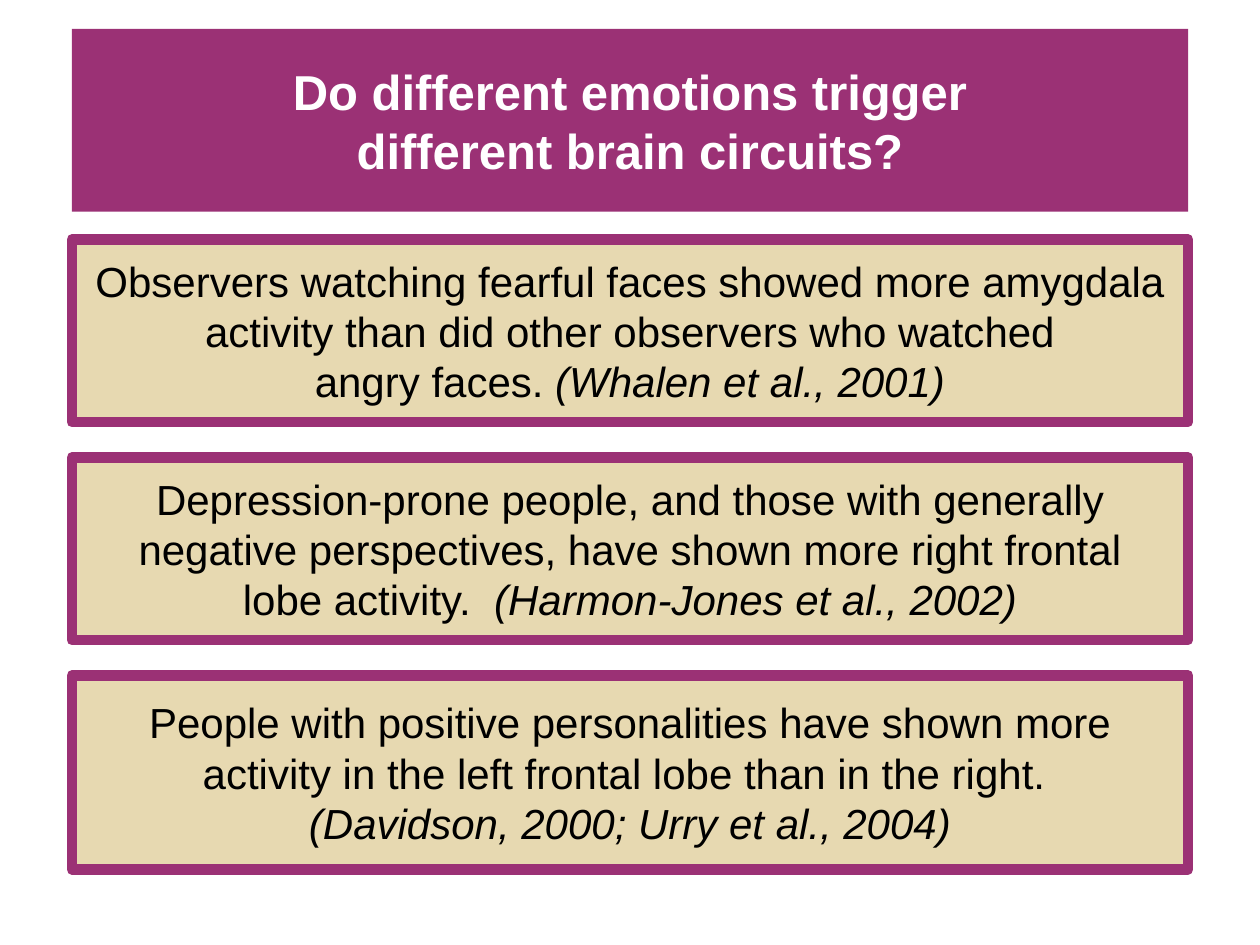
import pptx
import pptx.dml.color
import pptx.enum.shapes
import pptx.enum.text
import pptx.util
from pptx.util import Inches

PLUM = "9B3175"
SAND = "E7D9B1"
LEFT, WIDTH = 0.57, 8.86
FIRST_TOP, STEP = 1.9, 1.73

# Height, statement, rest of the statement, citation
FINDINGS = [
    (1.45, "Observers watching fearful faces showed more amygdala activity "
     "than did other observers who watched",
     "angry faces. ", "(Whalen et al., 2001)"),
    (1.45, "Depression-prone people, and those with generally negative "
     "perspectives, have shown more right frontal",
     "lobe activity.  ", "(Harmon-Jones et al., 2002)"),
    (1.54, "People with positive personalities have shown more activity "
     "in the left frontal lobe than in the right. ",
     "", "(Davidson, 2000; Urry et al., 2004)"),
]


def color(value):
    return pptx.dml.color.RGBColor.from_string(value)


def add_box(top, height, fill, text, size, font_color):
    """Add a full-width rectangle with centred text, one paragraph per line."""
    box = slide.shapes.add_shape(
        pptx.enum.shapes.MSO_SHAPE.RECTANGLE,
        Inches(LEFT), Inches(top), Inches(WIDTH), Inches(height))
    box.shadow.inherit = False
    box.fill.solid()
    box.fill.fore_color.rgb = color(fill)
    box.text_frame.word_wrap = True
    box.text_frame.vertical_anchor = pptx.enum.text.MSO_ANCHOR.MIDDLE
    box.text_frame.text = text
    for para in box.text_frame.paragraphs:
        para.alignment = pptx.enum.text.PP_ALIGN.CENTER
        para.font.size = pptx.util.Pt(size)
        for span in para.runs:
            span.font.name = "Arial"
            span.font.size = pptx.util.Pt(size)
            span.font.color.rgb = color(font_color)
    return box


deck = pptx.Presentation()
deck.slide_width = Inches(10)
deck.slide_height = Inches(7.5)
slide = deck.slides.add_slide(deck.slide_layouts[6])

title = add_box(0.23, 1.45, PLUM,
                "Do different emotions trigger\vdifferent brain circuits?",
                28, "FFFFFF")
title.line.fill.background()
for span in title.text_frame.paragraphs[0].runs:
    span.font.bold = True

for index, (height, statement, ending, citation) in enumerate(FINDINGS):
    box = add_box(FIRST_TOP + index * STEP, height, SAND,
                  f"{statement}\n{ending}", 24, "000000")
    box.line.color.rgb = color(PLUM)
    box.line.width = pptx.util.Pt(6)
    span = box.text_frame.paragraphs[1].add_run()
    span.text = citation
    span.font.name = "Arial"
    span.font.size = pptx.util.Pt(24)
    span.font.color.rgb = color("000000")
    span.font.italic = True

deck.save("out.pptx")
